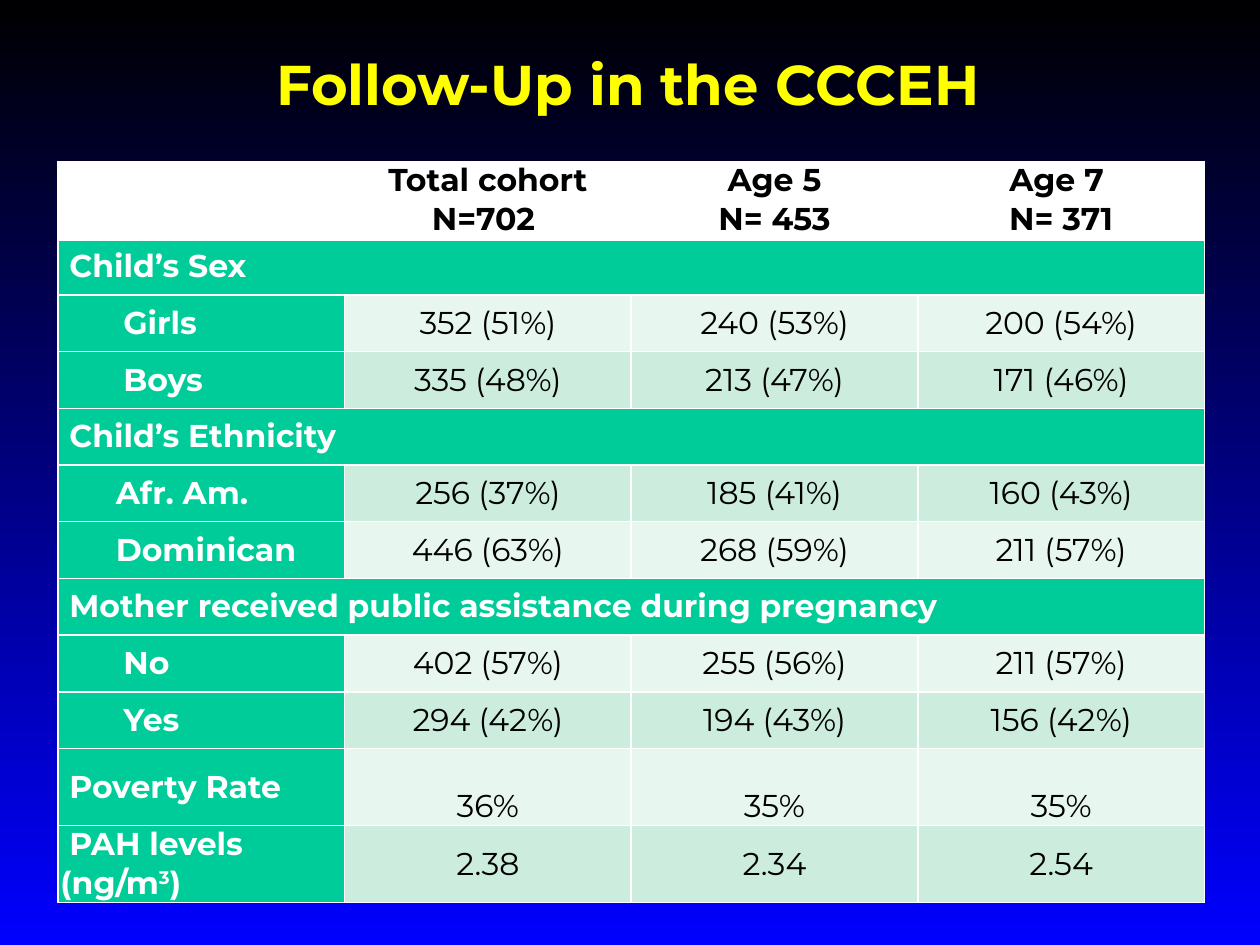
from dataclasses import dataclass

from lxml.etree import SubElement
from pptx import Presentation
from pptx.dml.color import RGBColor as RGB
from pptx.enum.text import MSO_ANCHOR as Anchor, PP_ALIGN as Align
from pptx.oxml.ns import qn
from pptx.util import Inches, Pt


@dataclass(frozen=True)
class Theme:
    """Colours, font and type sizes of the slide."""
    font: str = "Montserrat"
    title_size: int = 32
    table_size: int = 18
    black: RGB = RGB(0, 0, 0)
    blue: RGB = RGB(0, 0, 255)
    white: RGB = RGB(255, 255, 255)
    yellow: RGB = RGB(255, 255, 0)
    green: RGB = RGB.from_string("00CC99")
    bands: tuple = (RGB.from_string("E7F6EF"), RGB.from_string("CCECDE"))


THEME = Theme()
HEADERS = ["", "Total cohort\nN=702\u00a0", "Age 5\nN= 453", "Age 7 \nN= 371"]
ROWS = [
    (" Child’s Sex", 0, []),
    ("Girls", 0.5, ["352 (51%)", "240 (53%)", "200 (54%)"]),
    ("Boys", 0.5, ["335 (48%)", "213 (47%)", "171 (46%)"]),
    (" Child’s Ethnicity\u00a0", 0, []),
    ("Afr. Am.", 0.44, ["256 (37%)", "185 (41%)", "160 (43%)"]),
    ("Dominican", 0.44, ["446 (63%)", "268 (59%)", "211 (57%)"]),
    (" Mother received public assistance during pregnancy\u00a0", 0, []),
    ("No", 0.5, ["402 (57%)", "255 (56%)", "211 (57%)"]),
    ("Yes", 0.5, ["294 (42%)", "194 (43%)", "156 (42%)"]),
    (" Poverty Rate", 0, ["36%", "35%", "35%"]),
    (" PAH levels (ng/m", 0, ["2.38", "2.34", "2.54"]),
]
POVERTY_ROW = 10
PAH_ROW = 11


def format_paragraph(paragraph, size, color, bold, align):
    """Set the alignment of a paragraph and the font of its runs."""
    paragraph.alignment = align
    for font in [paragraph.font] + [run.font for run in paragraph.runs]:
        font.name, font.size, font.bold = THEME.font, Pt(size), bold
        font.color.rgb = color


def set_borders(cell, bottom_width):
    """Draw white lines on the four sides of a cell."""
    properties = cell._tc.get_or_add_tcPr()
    widths = {"lnL": 1, "lnR": 1, "lnT": 1, "lnB": bottom_width}
    for position, (side, width) in enumerate(widths.items()):
        line = SubElement(properties, qn(f"a:{side}"), w=str(Pt(width)))
        fill = SubElement(line, qn("a:solidFill"))
        SubElement(fill, qn("a:srgbClr"), val=str(THEME.white))
        properties.insert(position, line)


def fill_cell(cell, text, fill, color, bold, align, bottom_width=1):
    """Write and style one table cell."""
    cell.fill.solid()
    cell.fill.fore_color.rgb = fill
    cell.vertical_anchor = Anchor.MIDDLE
    cell.margin_left = cell.margin_right = Inches(0.02)
    cell.margin_top = cell.margin_bottom = 0
    cell.text_frame.text = text
    for paragraph in cell.text_frame.paragraphs:
        format_paragraph(paragraph, THEME.table_size, color, bold, align)
    set_borders(cell, bottom_width)


def add_unit_exponent(paragraph):
    """Finish the unit of the PAH label with a raised 3."""
    for text, baseline in (("3", "30000"), (")", "0")):
        run = paragraph.add_run()
        run.text = text
        run.font._element.set("baseline", baseline)
    format_paragraph(paragraph, THEME.table_size, THEME.white, True, Align.LEFT)


def add_cohort_table(slide, left, top, width, height):
    """Add the follow-up table inside the given box."""
    table = slide.shapes.add_table(
        len(ROWS) + 1, len(HEADERS), left, top, width, height).table
    table.first_row = table.horz_banding = False
    for column, text in enumerate(HEADERS):
        fill_cell(table.cell(0, column), text, THEME.white, THEME.black,
                  True, Align.CENTER, bottom_width=3)
    for index, (label, indent, values) in enumerate(ROWS, start=1):
        label_cell = table.cell(index, 0)
        fill_cell(label_cell, label, THEME.green, THEME.white, True, Align.LEFT)
        if indent:
            properties = label_cell.text_frame.paragraphs[0]._p.get_or_add_pPr()
            properties.set("marL", str(Inches(indent)))
        if not values:
            label_cell.merge(table.cell(index, len(HEADERS) - 1))
        for column, value in enumerate(values, start=1):
            fill_cell(table.cell(index, column), value, THEME.bands[index % 2],
                      THEME.black, False, Align.CENTER)
    for column in range(1, len(HEADERS)):
        cell = table.cell(POVERTY_ROW, column)
        cell.vertical_anchor = Anchor.TOP
        cell.margin_left = cell.margin_right = Inches(0.07)
        cell.text_frame.paragraphs[0].line_spacing = 2.0
    add_unit_exponent(table.cell(PAH_ROW, 0).text_frame.paragraphs[0])


def add_title(slide, left, top, width, height):
    """Add the centred title inside the given box."""
    text_frame = slide.shapes.add_textbox(left, top, width, height).text_frame
    text_frame.word_wrap = True
    text_frame.text = "Follow-Up in the CCCEH"
    format_paragraph(text_frame.paragraphs[0], THEME.title_size, THEME.yellow,
                     True, Align.CENTER)


def set_background(slide):
    """Fill the slide with a gradient from black down to blue."""
    fill = slide.background.fill
    fill.gradient()
    fill.gradient_angle = 270
    for stop, color in zip(fill.gradient_stops, (THEME.black, THEME.blue)):
        stop.color.rgb = color


def main():
    """Build the slide and save it."""
    presentation = Presentation()
    presentation.slide_width = Inches(10)
    presentation.slide_height = Inches(7.5)
    slide = presentation.slides.add_slide(presentation.slide_layouts[6])
    set_background(slide)
    add_cohort_table(slide, Inches(0.46), Inches(1.28), Inches(9.1), Inches(5.4))
    add_title(slide, Inches(0.42), Inches(0.34), Inches(9.13), Inches(0.64))
    presentation.save("out.pptx")


if __name__ == "__main__":
    main()
